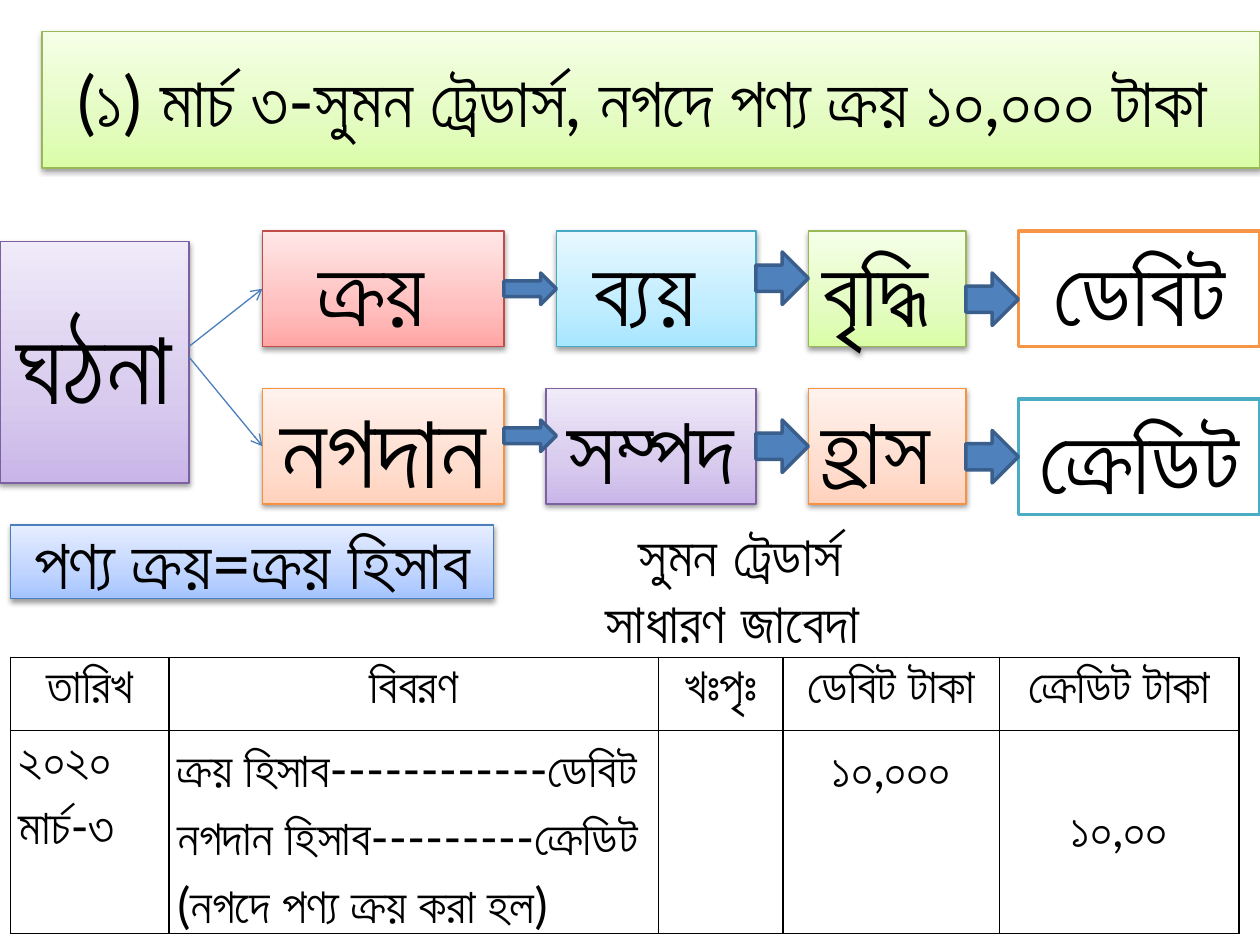
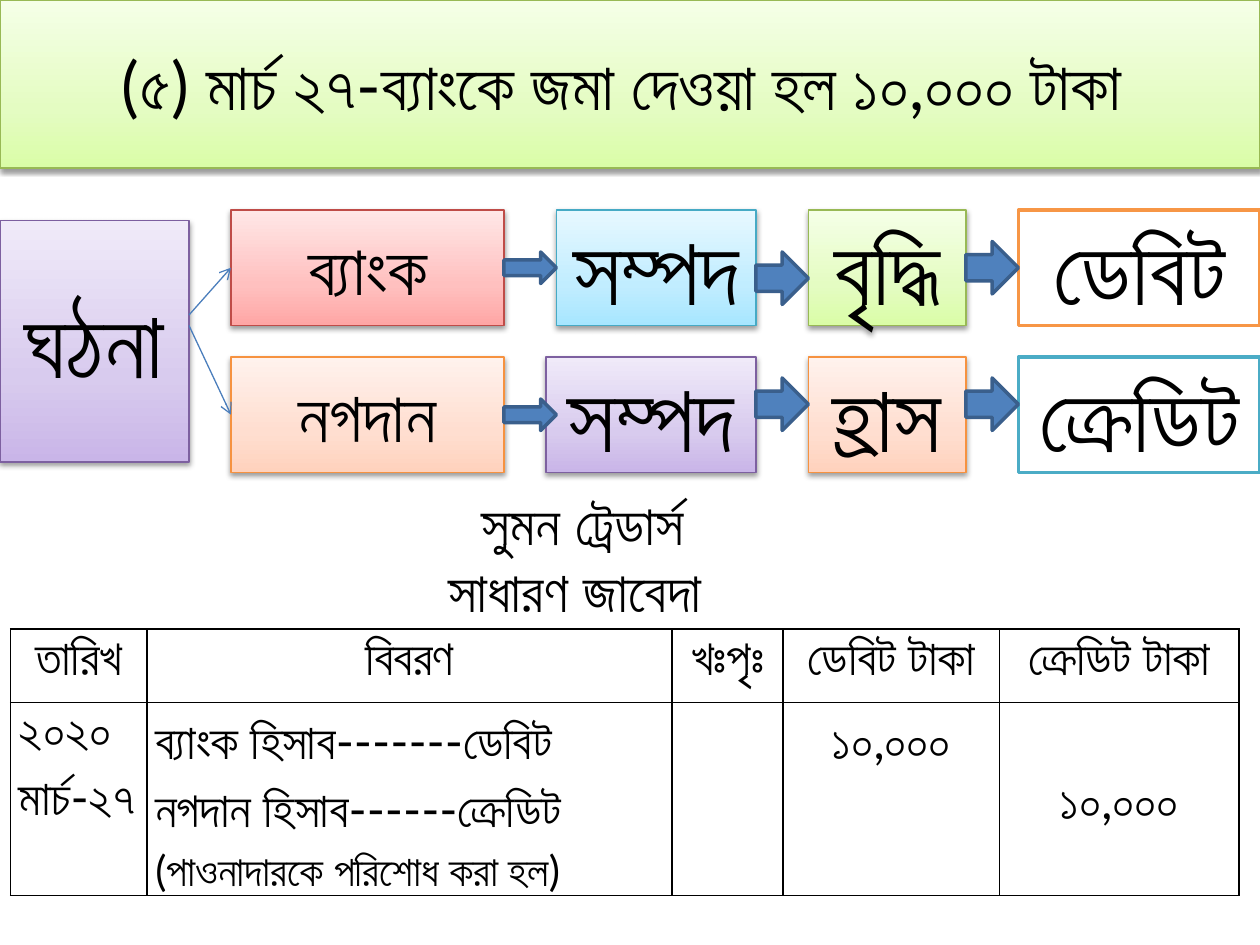
from copy import deepcopy
from dataclasses import dataclass, field
from typing import Any, NamedTuple, Optional

import lxml.etree
import pptx
import pptx.dml.color
import pptx.enum.shapes
import pptx.enum.text
import pptx.oxml.ns
import pptx.util

EMU_PER_PX = 7620
RECTANGLE = pptx.enum.shapes.MSO_SHAPE.RECTANGLE
RIGHT_ARROW = pptx.enum.shapes.MSO_SHAPE.RIGHT_ARROW
CENTER = pptx.enum.text.PP_ALIGN.CENTER
LEFT = pptx.enum.text.PP_ALIGN.LEFT
MIDDLE = pptx.enum.text.MSO_ANCHOR.MIDDLE
TOP = pptx.enum.text.MSO_ANCHOR.TOP
qn = pptx.oxml.ns.qn


class Tone(NamedTuple):
    stops: tuple[str, ...]
    line: str


@dataclass(frozen=True)
class Theme:
    green: Tone = Tone(("DAFDA7", "E4FCC2", "F5FFE7"), "98B955")
    purple: Tone = Tone(("C9B5E8", "D8CBEE", "F0EAF9"), "7D60A0")
    red: Tone = Tone(("FFA6A5", "FFC0BF", "FFE7E7"), "BF4C48")
    orange: Tone = Tone(("FFD2BD", "FFDED0", "FFF2ED"), "F69240")
    sky: Tone = Tone(("A7E6FF", "C1EDFF", "E7F8FF"), "46AAC5")
    blue: Tone = Tone(("A4C4FF", "BFD4FF", "E6EEFF"), "4B7EBC")
    debit: Tone = Tone(("FFFFFF",), "F79646")
    credit: Tone = Tone(("FFFFFF",), "4BACC6")
    arrow: Tone = Tone(("4F81BD",), "3A5F8C")
    stop_positions: tuple[float, ...] = (0, 0.35, 1)
    ink: str = "000000"
    font: str = "Lato"
    header_font: str = "Calibri"
    stage_size: int = 54
    title_size: int = 40
    heading_size: int = 32
    table_size: int = 28
    remark_size: int = 24
    thin: float = 0.75
    thick: float = 2


THEME = Theme()


class Box(NamedTuple):
    left: int
    top: int
    width: int
    height: int


class Label(NamedTuple):
    text: str
    size: int = THEME.stage_size


class Entry(NamedTuple):
    lines: tuple[Label, ...] = ()
    align: Any = LEFT
    margin_top: int = 0


class Flow(NamedTuple):
    top: int
    stages: tuple[Label, ...]
    arrow_tops: tuple[int, ...]
    result_top: int


@dataclass(frozen=True)
class Transaction:
    title: Label
    title_box: Box
    event: Label
    event_top: int
    first_left: int
    flows: tuple[Flow, Flow]
    branch_tops: tuple[int, int]
    heading_box: Box
    table_top: int
    column_widths: tuple[int, ...]
    entry_height: int
    entries: tuple[Entry, ...]
    note: Optional[Label] = field(default=None)


STAGE_HEIGHT = 110
FIRST_RIGHT = 480
STAGE_TONES = (
    (THEME.red, THEME.sky, THEME.green, THEME.debit),
    (THEME.orange, THEME.purple, THEME.orange, THEME.credit),
)
STAGE_SPANS = (
    ((530, 190), (770, 150), (970, 230)),
    ((520, 200), (770, 150), (970, 230)),
)
ARROWS = ((480, 30), (720, 50), (920, 50))
ARROW_WIDTH = 50
HEADER_HEIGHT = 70
HEADERS = ("তারিখ", "বিবরণ", "খঃপৃঃ", "ডেবিট টাকা", "ক্রেডিট টাকা")
CREDIT_DROP = 57


def px(length: float) -> int:
    return pptx.util.Emu(round(length * EMU_PER_PX))


def rgb(value: str) -> Any:
    return pptx.dml.color.RGBColor.from_string(value)


def apply(target: Any, values: dict[str, Any]) -> None:
    for name, value in values.items():
        setattr(target, name, value)


def place(box: Box) -> list[int]:
    return [px(length) for length in box]


def add_element(parent: Any, tag: str, **attributes: str) -> Any:
    return lxml.etree.SubElement(parent, qn(tag), attributes)


def write_lines(frame: Any, lines: tuple[Label, ...], align: Any, font: str = THEME.font,
                bold: bool = False, spacing: float = 1.0) -> None:
    for index, label in enumerate(lines):
        paragraph = frame.add_paragraph() if index else frame.paragraphs[0]
        apply(paragraph, {"alignment": align, "line_spacing": spacing})
        run = paragraph.add_run()
        run.text = label.text
        apply(run.font, {"name": font, "size": pptx.util.Pt(label.size), "bold": bold})
        run.font.color.rgb = rgb(THEME.ink)


def add_shadow(shape: Any) -> None:
    effects = shape._element.spPr.find(qn("a:effectLst"))
    shadow = add_element(effects, "a:outerShdw", blurRad="40000", dist="20000",
                         dir="5400000", rotWithShape="0")
    color = add_element(shadow, "a:srgbClr", val=THEME.ink)
    add_element(color, "a:alpha", val="38000")


def add_block(slide: Any, box: Box, tone: Tone, label: Optional[Label] = None,
              preset: Any = RECTANGLE) -> Any:
    block = slide.shapes.add_shape(preset, *place(box))
    block.shadow.inherit = False
    graded = len(tone.stops) > 1
    if graded:
        block.fill.gradient()
        stops = block._element.spPr.find(".//" + qn("a:gsLst"))
        stops.insert(1, deepcopy(stops[0]))
        for stop, position, color in zip(block.fill.gradient_stops, THEME.stop_positions, tone.stops):
            stop.position = position
            stop.color.rgb = rgb(color)
        block.fill.gradient_angle = 90
        add_shadow(block)
    else:
        block.fill.solid()
        block.fill.fore_color.rgb = rgb(tone.stops[0])
    block.line.color.rgb = rgb(tone.line)
    block.line.width = pptx.util.Pt(THEME.thin if graded else THEME.thick)
    if label:
        apply(block.text_frame, {"word_wrap": True, "vertical_anchor": MIDDLE})
        write_lines(block.text_frame, (label,), CENTER)
    return block


def add_branch(slide: Any, start: tuple[int, int], stage: Any) -> None:
    branch = slide.shapes.add_connector(
        pptx.enum.shapes.MSO_CONNECTOR.STRAIGHT, px(start[0]), px(start[1]),
        stage.left, stage.top + stage.height // 2)
    branch.end_connect(stage, 1)
    branch.line.color.rgb = rgb(THEME.blue.line)
    branch.line.width = pptx.util.Pt(THEME.thin)
    properties = branch._element.spPr
    add_element(properties.find(qn("a:ln")), "a:tailEnd", type="arrow")
    add_element(properties, "a:effectLst")


def add_flow(slide: Any, flow: Flow, row: int, first_left: int) -> Any:
    spans = ((first_left, FIRST_RIGHT - first_left), *STAGE_SPANS[row])
    tops = (flow.top,) * 3 + (flow.result_top,)
    blocks = [
        add_block(slide, Box(left, top, width, STAGE_HEIGHT), tone, label)
        for (left, width), top, tone, label in zip(spans, tops, STAGE_TONES[row], flow.stages)
    ]
    for (left, height), top in zip(ARROWS, flow.arrow_tops):
        add_block(slide, Box(left, top, ARROW_WIDTH, height), THEME.arrow, preset=RIGHT_ARROW)
    return blocks[0]


def add_heading(slide: Any, box: Box) -> None:
    heading = slide.shapes.add_textbox(*place(box)).text_frame
    apply(heading, {"word_wrap": True, "vertical_anchor": TOP})
    lines = tuple(Label(text, THEME.heading_size) for text in ("সুমন ট্রেডার্স", "সাধারণ জাবেদা "))
    write_lines(heading, lines, CENTER, bold=True)


def fill_cell(cell: Any, entry: Entry, font: str) -> None:
    apply(cell, {"margin_left": px(8), "margin_right": px(8),
                 "margin_top": px(entry.margin_top), "margin_bottom": 0})
    properties = cell._tc.get_or_add_tcPr()
    for side in ("L", "R", "T", "B"):
        border = add_element(properties, f"a:ln{side}", w="12700")
        add_element(add_element(border, "a:solidFill"), "a:srgbClr", val=THEME.ink)
    cell.fill.background()
    write_lines(cell.text_frame, entry.lines, entry.align, font, spacing=1.15)


def add_journal(slide: Any, transaction: Transaction) -> None:
    heights = (HEADER_HEIGHT, transaction.entry_height)
    widths = transaction.column_widths
    box = Box(10, transaction.table_top, sum(widths), sum(heights))
    journal = slide.shapes.add_table(2, len(widths), *place(box)).table
    apply(journal, {"first_row": False, "horz_banding": False})
    for column, width in zip(journal.columns, widths):
        column.width = px(width)
    headers = tuple(Entry((Label(text, THEME.table_size),), CENTER) for text in HEADERS)
    rows = ((headers, THEME.header_font), (transaction.entries, THEME.font))
    for row, height, (entries, font) in zip(journal.rows, heights, rows):
        row.height = px(height)
        for cell, entry in zip(row.cells, entries):
            fill_cell(cell, entry, font)


def add_transaction(deck: Any, transaction: Transaction) -> None:
    slide = deck.slides.add_slide(deck.slide_layouts[6])
    add_block(slide, transaction.title_box, THEME.green, transaction.title)
    add_block(slide, Box(0, transaction.event_top, 180, 230), THEME.purple, transaction.event)
    for row, (flow, branch_top) in enumerate(zip(transaction.flows, transaction.branch_tops)):
        first_stage = add_flow(slide, flow, row, transaction.first_left)
        add_branch(slide, (180, branch_top), first_stage)
    if transaction.note:
        add_block(slide, Box(10, 500, 460, 70), THEME.blue, transaction.note)
    add_heading(slide, transaction.heading_box)
    add_journal(slide, transaction)


def journal_entries(date: str, postings: tuple[str, str], remark: Label,
                    debit: str, credit: str) -> tuple[Entry, ...]:
    def sized(*texts: str) -> tuple[Label, ...]:
        return tuple(Label(text, THEME.table_size) for text in texts)

    return (Entry(sized("২০২০", date)), Entry((*sized(*postings), remark)), Entry(),
            Entry(sized(debit), CENTER), Entry(sized(credit), CENTER, CREDIT_DROP))


TRANSACTIONS = (
    Transaction(
        title=Label("(১) মার্চ ৩-সুমন ট্রেডার্স, নগদে পণ্য ক্রয় ১০,০০০ টাকা ", THEME.title_size),
        title_box=Box(40, 30, 1160, 130),
        event=Label("ঘঠনা", 60), event_top=230, first_left=250,
        flows=(
            Flow(220, (Label("ক্রয় "), Label("ব্যয় "), Label("বৃদ্ধি "), Label("ডেবিট")),
                 (260, 240, 260), 220),
            Flow(370, (Label("নগদান ", 60), Label("সম্পদ "), Label("হ্রাস "), Label("ক্রেডিট ")),
                 (400, 400, 410), 380),
        ),
        branch_tops=(330, 340),
        note=Label("পণ্য ক্রয়=ক্রয় হিসাব", THEME.title_size),
        heading_box=Box(430, 490, 550, 142),
        table_top=626, column_widths=(151, 466, 119, 206, 228), entry_height=193,
        entries=journal_entries(
            "মার্চ-৩", ("ক্রয় হিসাব------------ডেবিট", "নগদান হিসাব---------ক্রেডিট"),
            Label("(নগদে পণ্য ক্রয় করা হল)", THEME.table_size), "১০,০০০", "১০,০০"),
    ),
    Transaction(
        title=Label("(৫) মার্চ ২৭-ব্যাংকে জমা দেওয়া হল ১০,০০০ টাকা ", 38),
        title_box=Box(0, 0, 1200, 160),
        event=Label("ঘঠনা"), event_top=210, first_left=220,
        flows=(
            Flow(200, (Label("ব্যাংক", 40), Label("সম্পদ "), Label("বৃদ্ধি"), Label("ডেবিট")),
                 (240, 240, 230), 200),
            Flow(340, (Label("নগদান", 40), Label("সম্পদ"), Label("হ্রাস"), Label("ক্রেডিট ")),
                 (380, 360, 360), 340),
        ),
        branch_tops=(300, 310),
        heading_box=Box(380, 460, 350, 142),
        table_top=599, column_widths=(130, 500, 106, 206, 228), entry_height=184,
        entries=journal_entries(
            "মার্চ-২৭", ("ব্যাংক হিসাব-------ডেবিট", "নগদান হিসাব------ক্রেডিট"),
            Label("(পাওনাদারকে পরিশোধ করা হল)", THEME.remark_size), "১০,০০০", "১০,০০০"),
    ),
)


def main() -> None:
    deck = pptx.Presentation()
    apply(deck, {"slide_width": px(1200), "slide_height": px(900)})
    for transaction in TRANSACTIONS:
        add_transaction(deck, transaction)
    deck.save("out.pptx")


if __name__ == "__main__":
    main()
